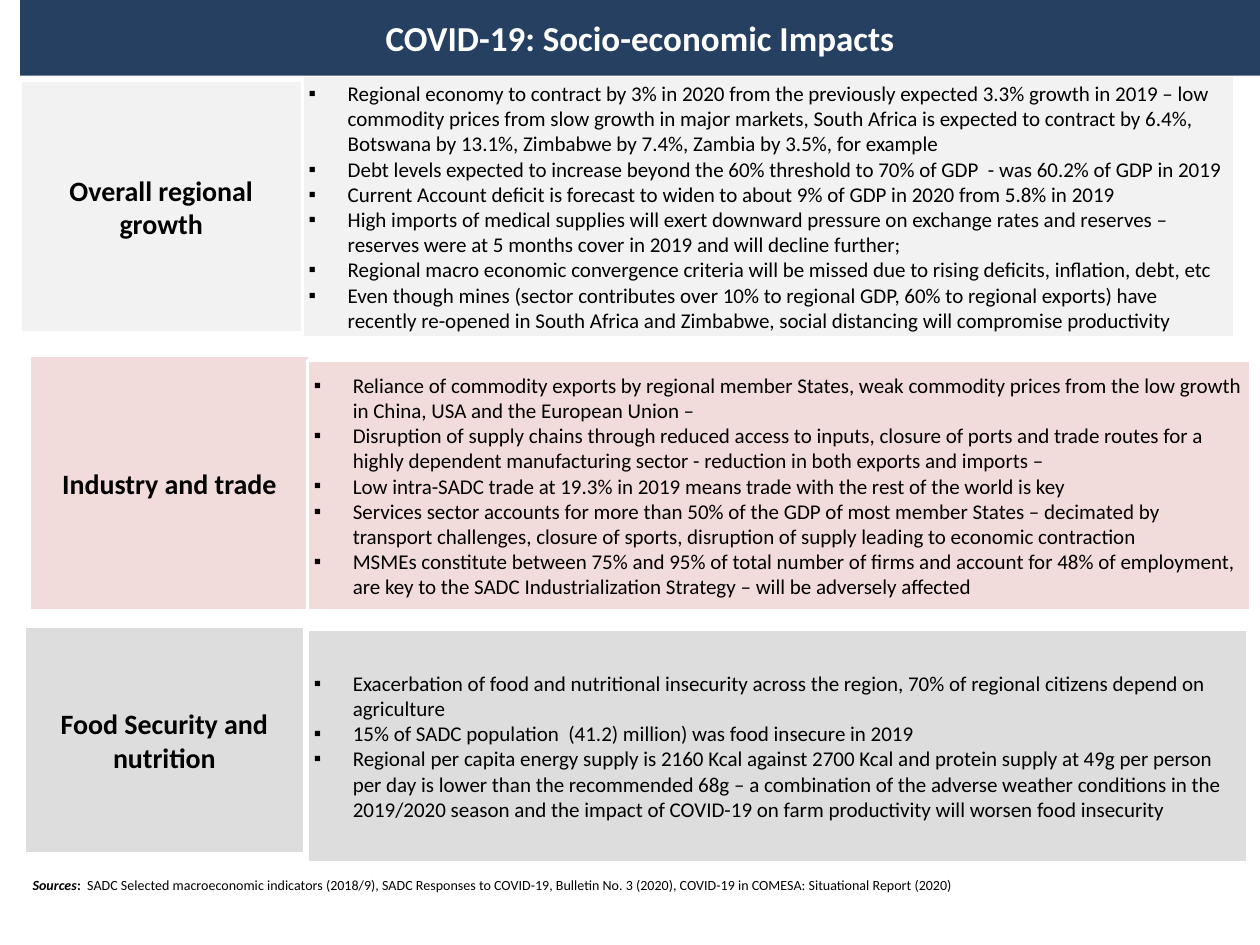
import pptx
import pptx.dml.color
import pptx.enum.shapes
import pptx.enum.text
import pptx.oxml.ns
import pptx.util
from lxml import etree

Inches = pptx.util.Inches
RGBColor = pptx.dml.color.RGBColor
Align = pptx.enum.text.PP_ALIGN
Anchor = pptx.enum.text.MSO_ANCHOR
qn = pptx.oxml.ns.qn

NAVY = RGBColor(0x25, 0x40, 0x61)
LIGHT_GREY = RGBColor(0xF2, 0xF2, 0xF2)
PINK = RGBColor(0xF2, 0xDC, 0xDB)
GREY = RGBColor(0xDD, 0xDD, 0xDD)
WHITE = RGBColor(0xFF, 0xFF, 0xFF)
BLACK = RGBColor(0, 0, 0)

COMPARISON_LAYOUT = 4
TITLE = "COVID-19: Socio-economic Impacts"

# label, colour, label box, list box, placeholder index, list items
SECTIONS = [
    ("Overall regional growth", LIGHT_GREY,
     (0.16, 0.64, 2.24, 2), (2.4, 0.6, 7.4, 2.08), 1, [
         "Regional economy to contract by 3% in 2020 from the previously expected 3.3% growth in 2019 – low "
         "commodity prices from slow growth in major markets, South Africa is expected to contract by 6.4%, "
         "Botswana by 13.1%, Zimbabwe by 7.4%, Zambia by 3.5%, for example",
         "Debt levels expected to increase beyond the 60% threshold to 70% of GDP  - was 60.2% of GDP in 2019",
         "Current Account deficit is forecast to widen to about 9% of GDP in 2020 from 5.8% in 2019",
         "High imports of medical supplies will exert downward pressure on exchange rates and reserves – "
         "reserves were at 5 months cover in 2019 and will decline further;",
         "Regional macro economic convergence criteria will be missed due to rising deficits, inflation, debt, etc",
         "Even though mines (sector contributes over 10% to regional GDP, 60% to regional exports) have "
         "recently re-opened in South Africa and Zimbabwe, social distancing will compromise productivity",
     ]),
    ("Industry and trade", PINK,
     (0.23, 2.82, 2.23, 2.03), (2.44, 2.86, 7.49, 1.99), 2, [
         "Reliance of commodity exports by regional member States, weak commodity prices from the low growth "
         "in China, USA and the European Union –",
         "Disruption of supply chains through reduced access to inputs, closure of ports and trade routes for a "
         "highly dependent manufacturing sector - reduction in both exports and imports –",
         "Low intra-SADC trade at 19.3% in 2019 means trade with the rest of the world is key",
         "Services sector accounts for more than 50% of the GDP of most member States – decimated by "
         "transport challenges, closure of sports, disruption of supply leading to economic contraction",
         "MSMEs constitute between 75% and 95% of total number of firms and account for 48% of employment, "
         "are key to the SADC Industrialization Strategy – will be adversely affected",
     ]),
    ("Food Security and nutrition", GREY,
     (0.19, 4.97, 2.23, 1.81), (2.44, 4.99, 7.46, 1.86), 4, [
         "Exacerbation of food and nutritional insecurity across the region, 70% of regional citizens depend on "
         "agriculture",
         "15% of SADC population  (41.2) million) was food insecure in 2019",
         "Regional per capita energy supply is 2160 Kcal against 2700 Kcal and protein supply at 49g per person "
         "per day is lower than the recommended 68g – a combination of the adverse weather conditions in the "
         "2019/2020 season and the impact of COVID-19 on farm productivity will worsen food insecurity",
     ]),
]

SOURCES = [
    ("Sources", True, True),
    (":", True, False),
    ("  SADC Selected macroeconomic indicators (2018/9), SADC Responses to COVID-19, Bulletin No. 3 (2020), "
     "COVID-19 in COMESA: Situational Report (2020)", False, False),
]


def add_bullet(paragraph, indent=0.31):
    properties = paragraph._p.get_or_add_pPr()
    properties.set("marL", str(Inches(indent)))
    properties.set("indent", str(-Inches(indent)))
    etree.SubElement(properties, qn("a:buFont")).set("typeface", "Arial")
    etree.SubElement(properties, qn("a:buChar")).set("char", "▪")


def write_text(shape, lines, size, colour=BLACK, bold=False, align=Align.LEFT,
               bullets=False, inset=0.05):
    frame = shape.text_frame
    frame.word_wrap = True
    frame.auto_size = pptx.enum.text.MSO_AUTO_SIZE.NONE
    frame.vertical_anchor = Anchor.MIDDLE
    frame.margin_left = frame.margin_right = Inches(inset)
    frame.margin_top = frame.margin_bottom = Inches(inset)
    for number, line in enumerate(lines):
        paragraph = frame.add_paragraph() if number else frame.paragraphs[0]
        paragraph.alignment = align
        paragraph.space_before = pptx.util.Pt(0)
        if bullets:
            add_bullet(paragraph)
        runs = [(line, bold, False)] if isinstance(line, str) else line
        for text, run_bold, italic in runs:
            run = paragraph.add_run()
            run.text = text
            run.font.name = "Calibri"
            run.font.size = pptx.util.Pt(size)
            run.font.color.rgb = colour
            run.font.bold = run_bold
            run.font.italic = italic


class ImpactSlide:
    """Holds the slide and the look of its title bar, labels and lists."""

    def __init__(self, presentation):
        layout = presentation.slide_layouts[COMPARISON_LAYOUT]
        self.slide = presentation.slides.add_slide(layout)
        self.placeholders = {shape.placeholder_format.idx: shape
                             for shape in self.slide.placeholders}

    def take_placeholder(self, index, box):
        """Move a placeholder to its box and to the front."""
        shape = self.placeholders.pop(index)
        shape.left, shape.top, shape.width, shape.height = map(Inches, box)
        self.slide.shapes._spTree.append(shape._element)
        return shape

    def paint(self, shape, colour):
        shape.fill.solid()
        shape.fill.fore_color.rgb = colour
        shape.line.color.rgb = WHITE
        shape.line.width = pptx.util.Pt(2)

    def title(self, text, box):
        shape = self.take_placeholder(0, box)
        geometry = etree.SubElement(shape._element.spPr, qn("a:prstGeom"))
        geometry.set("prst", "roundRect")
        etree.SubElement(geometry, qn("a:avLst"))
        shape.fill.solid()
        shape.fill.fore_color.rgb = NAVY
        write_text(shape, [text], 20, colour=WHITE, bold=True, align=Align.CENTER, inset=0.1)

    def label(self, text, box, colour):
        shape = self.slide.shapes.add_shape(
            pptx.enum.shapes.MSO_SHAPE.RECTANGLE, *map(Inches, box))
        shape.shadow.inherit = False
        self.paint(shape, colour)
        write_text(shape, [text], 16, bold=True, align=Align.CENTER)

    def bullet_list(self, items, box, colour, index):
        shape = self.take_placeholder(index, box)
        self.paint(shape, colour)
        write_text(shape, items, 12, bullets=True)

    def sources(self, runs, box):
        shape = self.slide.shapes.add_textbox(*map(Inches, box))
        write_text(shape, [runs], 8, inset=0.1)

    def remove_unused(self):
        for shape in self.placeholders.values():
            self.slide.shapes._spTree.remove(shape._element)


def main():
    presentation = pptx.Presentation()
    presentation.slide_width = Inches(10)
    presentation.slide_height = Inches(7.5)
    impacts = ImpactSlide(presentation)
    for label, colour, label_box, list_box, index, items in SECTIONS:
        impacts.label(label, label_box, colour)
        impacts.bullet_list(items, list_box, colour, index)
    impacts.title(TITLE, (0.16, 0, 9.84, 0.6))
    impacts.sources(SOURCES, (0.16, 6.9, 7.52, 0.24))
    impacts.remove_unused()
    presentation.save("out.pptx")


if __name__ == "__main__":
    main()
